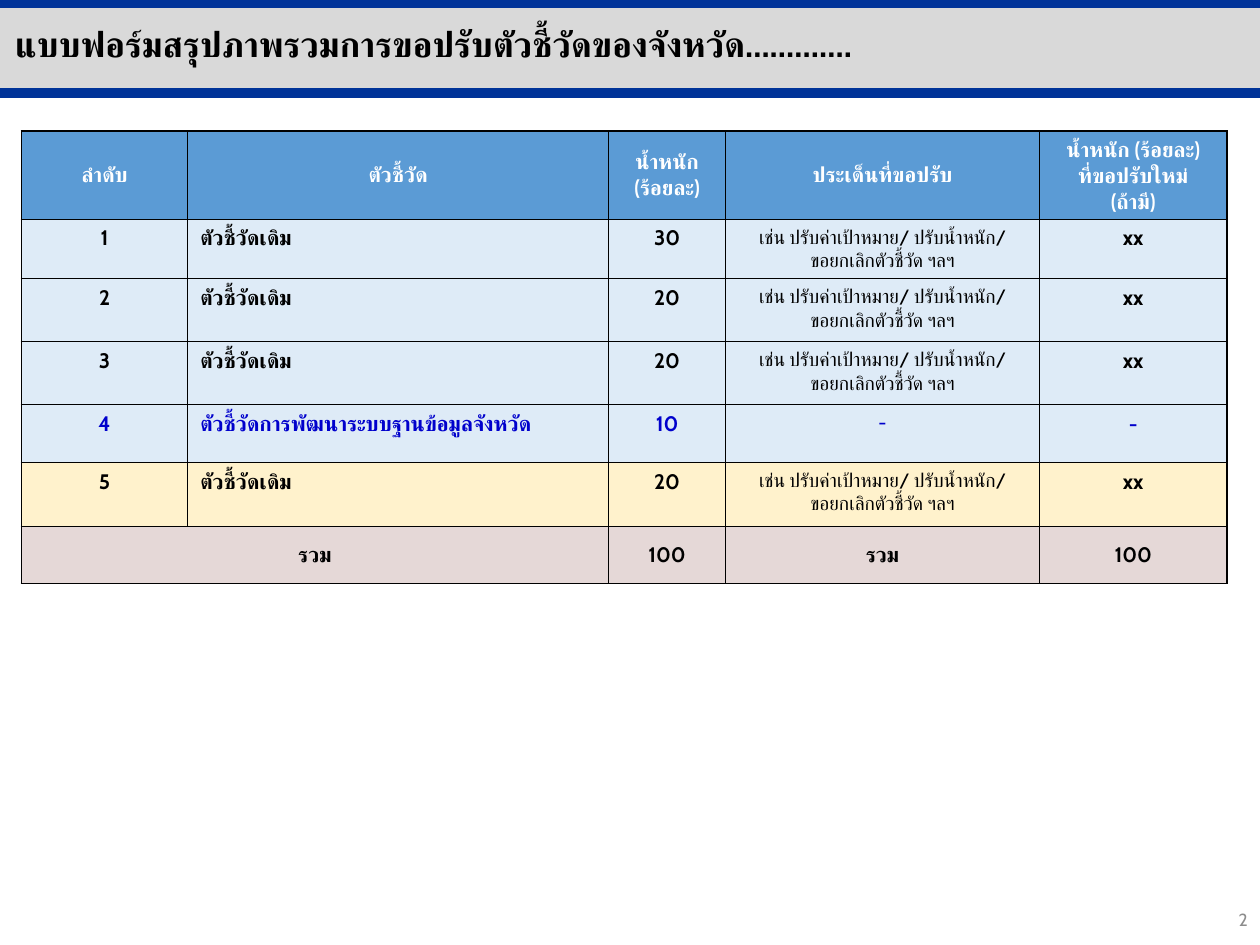
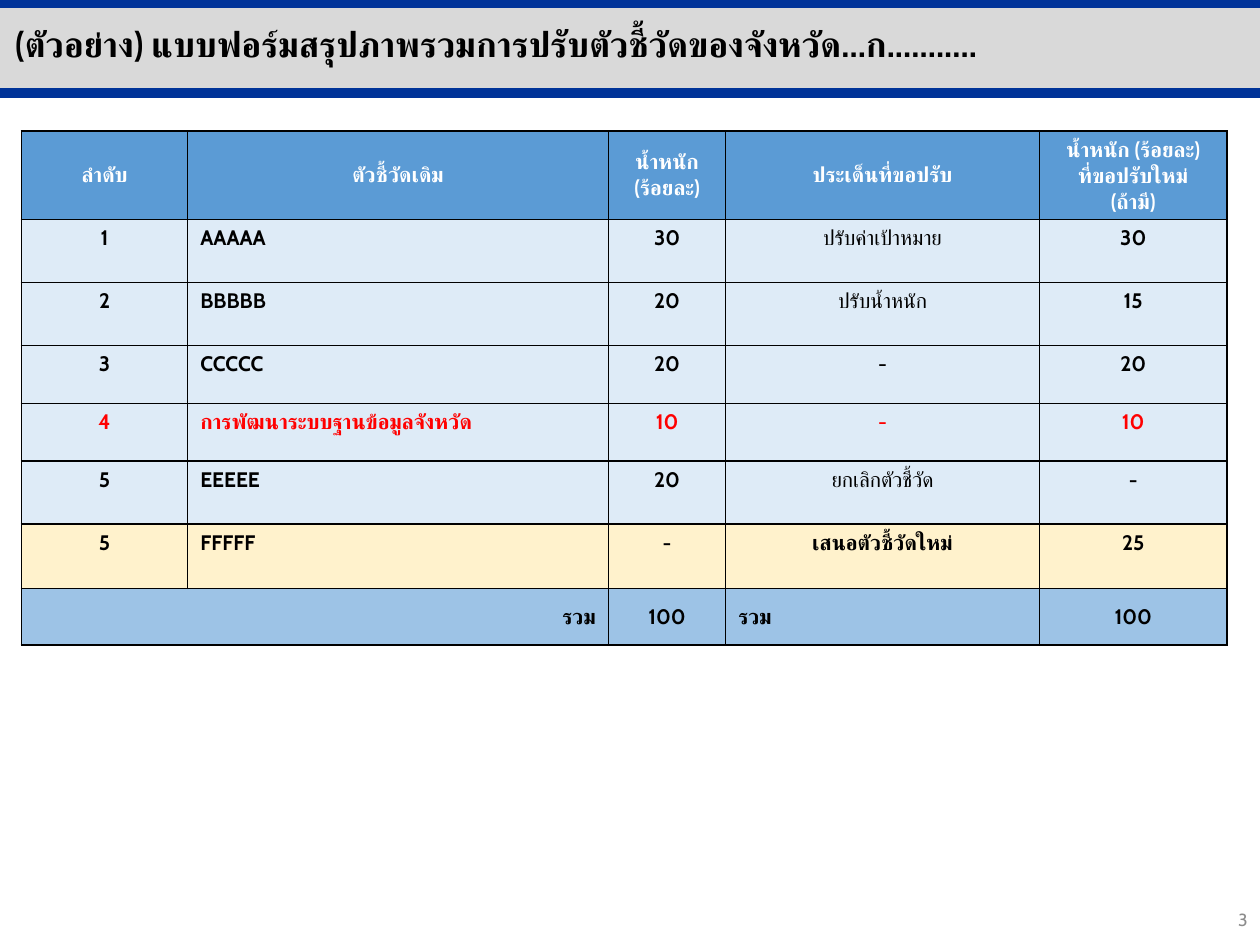
from lxml import etree
from pptx import Presentation
from pptx.dml.color import RGBColor
from pptx.enum.shapes import MSO_CONNECTOR, MSO_SHAPE
from pptx.enum.text import MSO_ANCHOR, MSO_AUTO_SIZE, PP_ALIGN
from pptx.oxml.ns import qn
from pptx.util import Inches, Pt

LEFT, CENTER, RIGHT = PP_ALIGN.LEFT, PP_ALIGN.CENTER, PP_ALIGN.RIGHT
TOP, MIDDLE = MSO_ANCHOR.TOP, MSO_ANCHOR.MIDDLE

# Shared look
FONT = "Cabin"
BLACK, WHITE, GRAY = "000000", "FFFFFF", "8C8C8C"
BAND_GRAY, BAND_BLUE = "D9D9D9", "003399"
HEADER_BLUE, ROW_BLUE, ROW_YELLOW = "5B9BD5", "DEEBF7", "FFF2CC"
TITLE_ONLY_LAYOUT = 5
SLIDE_WIDTH, SLIDE_HEIGHT = 10, 7.5

# Boxes as left, top, width, height
BAND_BOX = (0, 0.05, SLIDE_WIDTH, 0.68)
TITLE_BOX = (0.02, 0.13, 9.31, 0.44)
NUMBER_BOX = (7.75, 7.1, 2.25, 0.4)
TABLE_POSITION = (0.17, 1.04)

# Indicator table
COLUMN_WIDTHS = [1.32, 3.34, 0.93, 2.49, 1.49]
COLUMN_ALIGNMENTS = [CENTER, LEFT, CENTER, CENTER, CENTER]
ISSUE_COLUMN = 3
HEADER_HEIGHT, TOTAL_HEIGHT = 0.7, 0.45
WEIGHT_HEADER = "น้ำหนัก\v(ร้อยละ)"
ISSUE_HEADER = "ประเด็นที่ขอปรับ"
NEW_WEIGHT_HEADER = "น้ำหนัก (ร้อยละ)\vที่ขอปรับใหม่\n(ถ้ามี)"
CURRENT_INDICATOR = "ตัวชี้วัดเดิม"
ISSUE_EXAMPLE = "เช่น ปรับค่าเป้าหมาย/ ปรับน้ำหนัก/\vขอยกเลิกตัวชี้วัด ฯลฯ"

FORM = {
    "number": "2",
    "title": "แบบฟอร์มสรุปภาพรวมการขอปรับตัวชี้วัดของจังหวัด………….",
    "indicator_header": "ตัวชี้วัด",
    "issue_size": 11,
    "heights": [0.47, 0.5, 0.5, 0.46, 0.51],
    "rows": [
        ("1", CURRENT_INDICATOR, "30", ISSUE_EXAMPLE, "xx"),
        ("2", CURRENT_INDICATOR, "20", ISSUE_EXAMPLE, "xx"),
        ("3", CURRENT_INDICATOR, "20", ISSUE_EXAMPLE, "xx"),
        ("4", "ตัวชี้วัดการพัฒนาระบบฐานข้อมูลจังหวัด", "10", "-", "-"),
        ("5", CURRENT_INDICATOR, "20", ISSUE_EXAMPLE, "xx"),
    ],
    "database_color": "0000CC",
    "last_issue_bold": False,
    "total_fill": "E5D8D7",
    "total_alignments": [CENTER] * 5,
}

EXAMPLE = {
    "number": "3",
    "title": "(ตัวอย่าง) แบบฟอร์มสรุปภาพรวมการปรับตัวชี้วัดของจังหวัด…ก.……….",
    "indicator_header": CURRENT_INDICATOR,
    "issue_size": 12,
    "heights": [0.5, 0.5, 0.46, 0.46, 0.5, 0.51],
    "rows": [
        ("1", "AAAAA", "30", "ปรับค่าเป้าหมาย", "30"),
        ("2", "BBBBB", "20", "ปรับน้ำหนัก", "15"),
        ("3", "CCCCC", "20", "-", "20"),
        ("4", "การพัฒนาระบบฐานข้อมูลจังหวัด", "10", "-", "10"),
        ("5", "EEEEE", "20", "ยกเลิกตัวชี้วัด", "-"),
        ("5", "FFFFF", "-", "เสนอตัวชี้วัดใหม่", "25"),
    ],
    "database_color": "FF0000",
    "last_issue_bold": True,
    "total_fill": "9DC3E6",
    "total_alignments": [RIGHT, RIGHT, CENTER, LEFT, CENTER],
}


def rgb(hex_color):
    return RGBColor.from_string(hex_color)


def inches(values):
    return [Inches(value) for value in values]


def write(text_frame, text, size, color=BLACK, bold=False, alignment=LEFT):
    text_frame.text = text
    for paragraph in text_frame.paragraphs:
        paragraph.alignment = alignment
        for run in paragraph.runs:
            run.font.name = FONT
            run.font.size = Pt(size)
            run.font.bold = bold
            run.font.color.rgb = rgb(color)
            complex_script = etree.SubElement(run.font._element, qn("a:cs"))
            complex_script.set("typeface", FONT)


def add_band(slide, box):
    """Gray title band between two blue rules, behind the title."""
    left, top, width, height = box
    band = slide.shapes.add_shape(MSO_SHAPE.RECTANGLE, *inches(box))
    band.shadow.inherit = False
    band.fill.solid()
    band.fill.fore_color.rgb = rgb(BAND_GRAY)
    band.line.fill.background()
    parts = [band]
    for y in (top + height + 0.01, top - 0.03):
        rule = slide.shapes.add_connector(
            MSO_CONNECTOR.STRAIGHT, *inches((left, y, left + width, y)))
        rule.line.color.rgb = rgb(BAND_BLUE)
        rule.line.width = Pt(6)
        etree.SubElement(rule.element.spPr, qn("a:effectLst"))
        parts.append(rule)
    for position, part in enumerate(parts, start=2):
        slide.shapes.element.insert(position, part.element)


def add_title(slide, box, text):
    title = slide.shapes.title
    title.left, title.top, title.width, title.height = inches(box)
    text_frame = title.text_frame
    text_frame.auto_size = MSO_AUTO_SIZE.NONE
    text_frame.vertical_anchor = TOP
    write(text_frame, text, 20, bold=True)


def add_slide_number(slide, box, number):
    text_frame = slide.shapes.add_textbox(*inches(box)).text_frame
    text_frame.word_wrap = True
    text_frame.vertical_anchor = MIDDLE
    write(text_frame, number, 10, GRAY, alignment=RIGHT)


def format_cell(cell, fill, anchor):
    properties = cell._tc.get_or_add_tcPr()
    for side in ("L", "R", "T", "B"):
        border = etree.SubElement(properties, qn(f"a:ln{side}"), w=str(Pt(1)))
        solid = etree.SubElement(border, qn("a:solidFill"))
        etree.SubElement(solid, qn("a:srgbClr"), val=BLACK)
    cell.fill.solid()
    cell.fill.fore_color.rgb = rgb(fill)
    cell.vertical_anchor = anchor


def fill_row(row, texts, fill, color, alignments, anchor=MIDDLE,
             issue_size=12, issue_bold=True):
    for column, (cell, text) in enumerate(zip(row.cells, texts)):
        format_cell(cell, fill, anchor)
        is_issue = column == ISSUE_COLUMN
        if text:
            write(cell.text_frame, text, issue_size if is_issue else 12, color,
                  issue_bold if is_issue else True, alignments[column])


def add_indicator_table(slide, position, content):
    heights = [HEADER_HEIGHT, *content["heights"], TOTAL_HEIGHT]
    box = (*position, sum(COLUMN_WIDTHS), sum(heights))
    table = slide.shapes.add_table(
        len(heights), len(COLUMN_WIDTHS), *inches(box)).table
    for column, width in zip(table.columns, COLUMN_WIDTHS):
        column.width = Inches(width)
    for row, height in zip(table.rows, heights):
        row.height = Inches(height)

    # Header
    headers = ["ลำดับ", content["indicator_header"], WEIGHT_HEADER,
               ISSUE_HEADER, NEW_WEIGHT_HEADER]
    fill_row(table.rows[0], headers, HEADER_BLUE, WHITE, [CENTER] * 5)

    # Indicators, with the last one highlighted
    last = len(content["rows"])
    for index, texts in enumerate(content["rows"], start=1):
        fill_row(table.rows[index], texts,
                 ROW_YELLOW if index == last else ROW_BLUE,
                 content["database_color"] if texts[0] == "4" else BLACK,
                 COLUMN_ALIGNMENTS, TOP, content["issue_size"],
                 index == last and content["last_issue_bold"])

    # Totals
    total = last + 1
    table.cell(total, 0).merge(table.cell(total, 1))
    fill_row(table.rows[total], ["รวม", "", "100", "รวม", "100"],
             content["total_fill"], BLACK, content["total_alignments"])


def add_indicator_slide(presentation, content):
    layout = presentation.slide_layouts[TITLE_ONLY_LAYOUT]
    slide = presentation.slides.add_slide(layout)
    add_band(slide, BAND_BOX)
    add_title(slide, TITLE_BOX, content["title"])
    add_slide_number(slide, NUMBER_BOX, content["number"])
    add_indicator_table(slide, TABLE_POSITION, content)


def main():
    presentation = Presentation()
    presentation.slide_width = Inches(SLIDE_WIDTH)
    presentation.slide_height = Inches(SLIDE_HEIGHT)
    for content in (FORM, EXAMPLE):
        add_indicator_slide(presentation, content)
    presentation.save("out.pptx")


if __name__ == "__main__":
    main()
